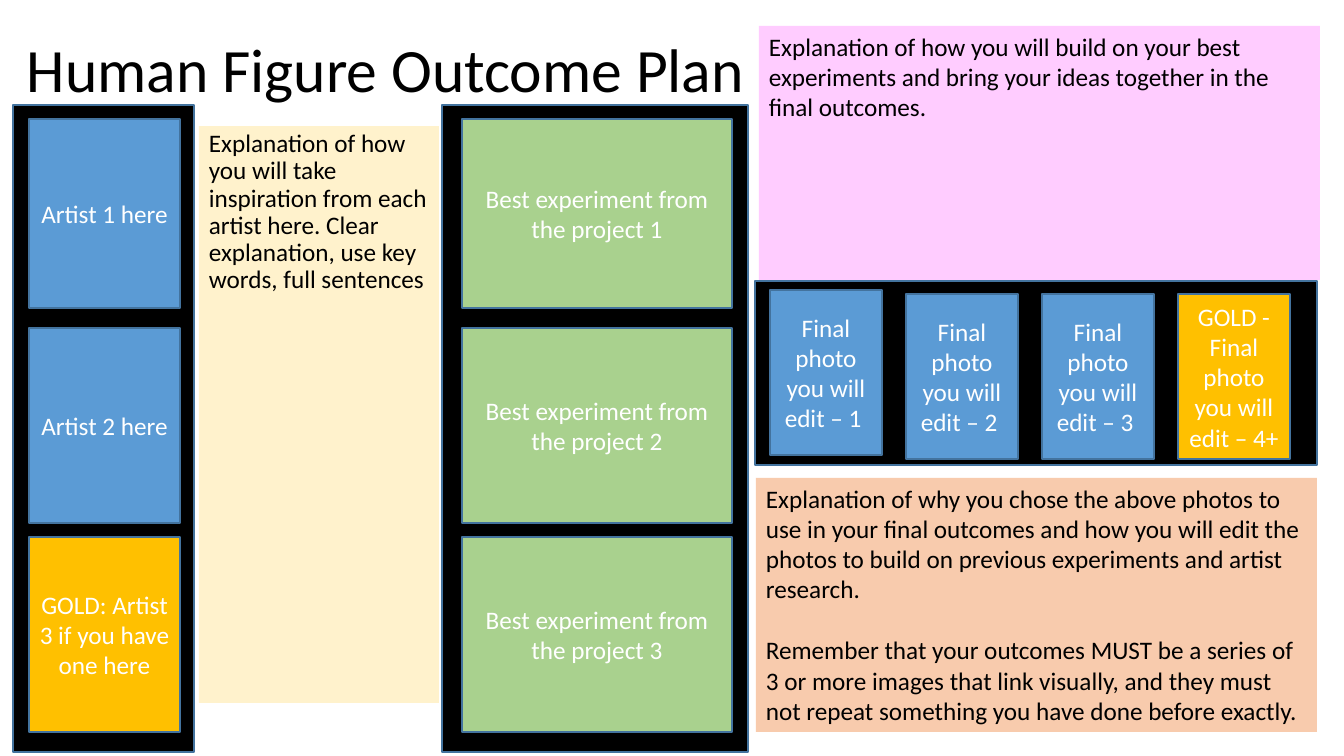
"""Build the Human Figure Outcome Plan slide."""
from pptx import Presentation
from pptx.dml.color import RGBColor
from pptx.enum.shapes import MSO_SHAPE
from pptx.enum.text import MSO_ANCHOR, PP_ALIGN
from pptx.util import Pt

TITLE = "Human Figure Outcome Plan"
ARTISTS = [
    ("Artist 1 here", "blue"),
    ("Artist 2 here", "blue"),
    ("GOLD: Artist 3 if you have one here", "gold"),
]
EXPERIMENTS = [(f"Best experiment from the project {number}", "green") for number in (1, 2, 3)]
PHOTOS = [
    ("Final photo you will edit – 1 ", "blue"),
    ("Final photo you will edit – 2 ", "blue"),
    ("Final photo you will edit – 3 ", "blue"),
    ("GOLD - Final photo you will edit – 4+ ", "gold"),
]
INSPIRATION = [
    "Explanation of how you will take inspiration from each artist here. "
    "Clear explanation, use key words, full sentences",
]
IDEAS = [
    "Explanation of how you will build on your best experiments and bring "
    "your ideas together in the final outcomes.",
]
CHOICES = [
    "Explanation of why you chose the above photos to use in your final outcomes and how "
    "you will edit the photos to build on previous experiments and artist research.",
    "Remember that your outcomes MUST be a series of 3 or more images that link visually, "
    "and they must not repeat something you have done before exactly.",
]

THEME = {
    "font": "Calibri", "title": 44, "body": 18, "gap": 22, "outline": 1,
    "black": "000000", "white": "FFFFFF", "edge": "43739E",
    "blue": "5B9BD5", "gold": "FFC000", "green": "A9D18E",
    "cream": "FFF2CC", "pink": "FFCCFF", "peach": "F8CBAD",
}
SLIDE = (1344, 756)
SCALE = 12192000 / SLIDE[0]

PANELS = [(755, 281, 562, 184), (442, 105, 306, 647), (13, 105, 181, 647)]
TITLE_AREA = (17, 0, 1159, 146)
NOTES = [
    (INSPIRATION, "cream", (199, 126, 240, 577), 0.9),
    (IDEAS, "pink", (759, 26, 561, 254), 1.0),
    (CHOICES, "peach", (756, 478, 561, 254), 1.0),
]
ROW_TOP, ROW_PITCH, ROW_HEIGHTS = 119, 209, (189, 195, 195)
COLUMNS = [(ARTISTS, 29, 151), (EXPERIMENTS, 462, 270)]
PHOTO_LEFT, PHOTO_PITCH, PHOTO_SIZE = 770, 136, (112, 165)
PHOTO_TOPS = (290, 294, 294, 294)


def emu(lengths):
    """Turn px lengths into EMU."""
    return [round(length * SCALE) for length in lengths]


def color(name):
    """Look up a theme colour."""
    return RGBColor.from_string(THEME[name])


def write(box, lines, ink="black", size="body", anchor=MSO_ANCHOR.TOP,
          align=PP_ALIGN.LEFT, spacing=1.0):
    """Fill a box with formatted paragraphs."""
    frame = box.text_frame
    frame.word_wrap = True
    frame.vertical_anchor = anchor
    for index, line in enumerate(lines):
        para = frame.add_paragraph() if index else frame.paragraphs[0]
        layout = {"alignment": align, "line_spacing": spacing,
                  "space_before": Pt(THEME["gap"] if index else 0)}
        for name, value in layout.items():
            setattr(para, name, value)
        span = para.add_run()
        span.text = line
        for name, value in {"name": THEME["font"], "size": Pt(THEME[size])}.items():
            setattr(span.font, name, value)
        span.font.color.rgb = color(ink)


def add_box(page, area, fill, outlined=True):
    """Add a flat rectangle."""
    box = page.shapes.add_shape(MSO_SHAPE.RECTANGLE, *emu(area))
    box.shadow.inherit = False
    box.fill.solid()
    box.fill.fore_color.rgb = color(fill)
    if outlined:
        box.line.color.rgb = color("edge")
        box.line.width = Pt(THEME["outline"])
    else:
        box.line.fill.background()
    return box


def add_card(page, area, label, fill):
    """Add an outlined box with a centred label."""
    write(add_box(page, area, fill), [label], ink="white",
          anchor=MSO_ANCHOR.MIDDLE, align=PP_ALIGN.CENTER)


def main():
    """Lay out the slide and save it."""
    deck = Presentation()
    deck.slide_width, deck.slide_height = emu(SLIDE)
    page = deck.slides.add_slide(deck.slide_layouts[6])

    for area in PANELS:
        add_box(page, area, "black")
    title = page.shapes.add_textbox(*emu(TITLE_AREA))
    write(title, [TITLE], size="title", anchor=MSO_ANCHOR.MIDDLE, spacing=0.9)
    for lines, fill, area, spacing in NOTES:
        write(add_box(page, area, fill, outlined=False), lines, spacing=spacing)

    for cards, left, width in COLUMNS:
        for row, (label, fill) in enumerate(cards):
            area = (left, ROW_TOP + row * ROW_PITCH, width, ROW_HEIGHTS[row])
            add_card(page, area, label, fill)
    for index, (label, fill) in enumerate(PHOTOS):
        area = (PHOTO_LEFT + index * PHOTO_PITCH, PHOTO_TOPS[index], *PHOTO_SIZE)
        add_card(page, area, label, fill)

    deck.save("out.pptx")


if __name__ == "__main__":
    main()
